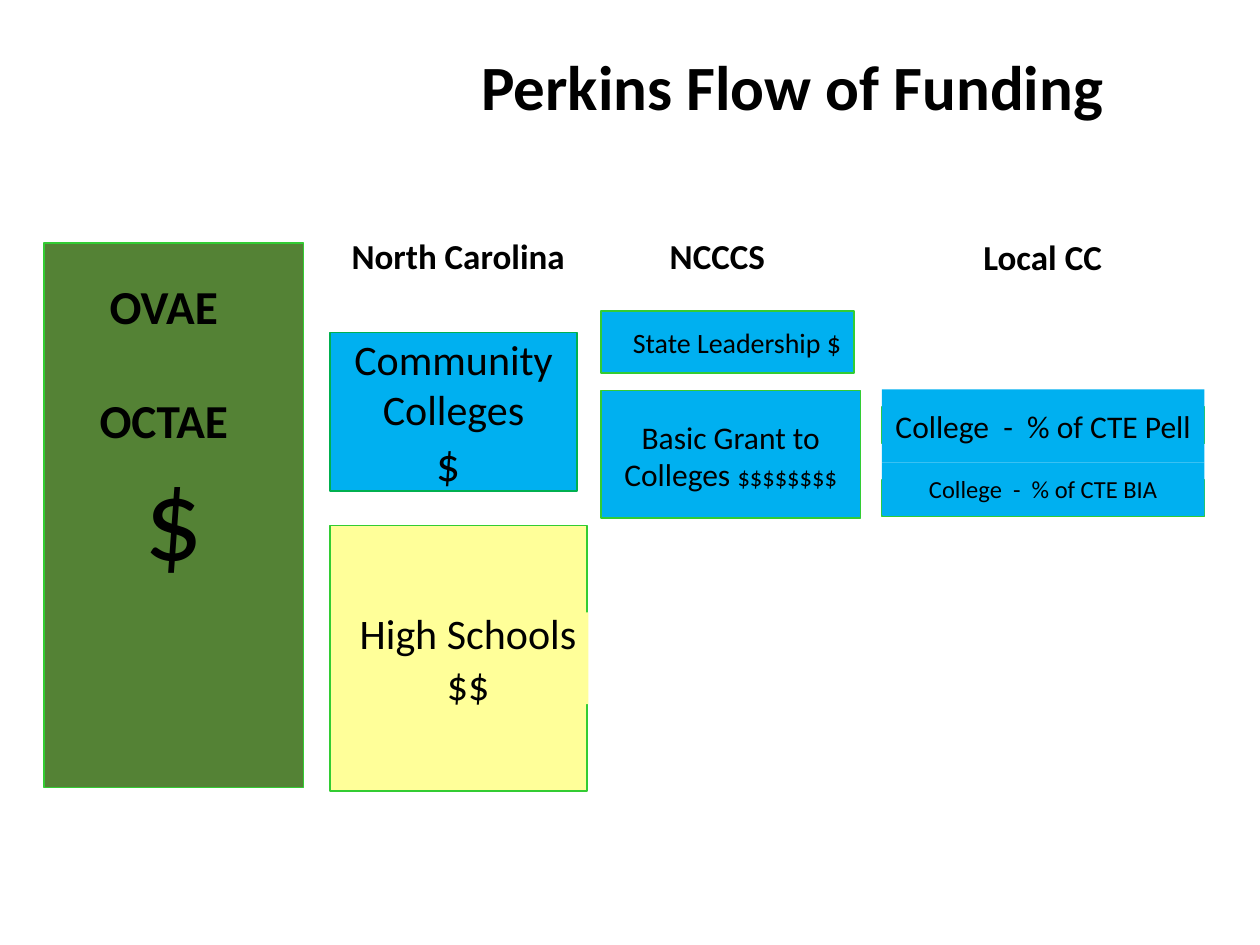
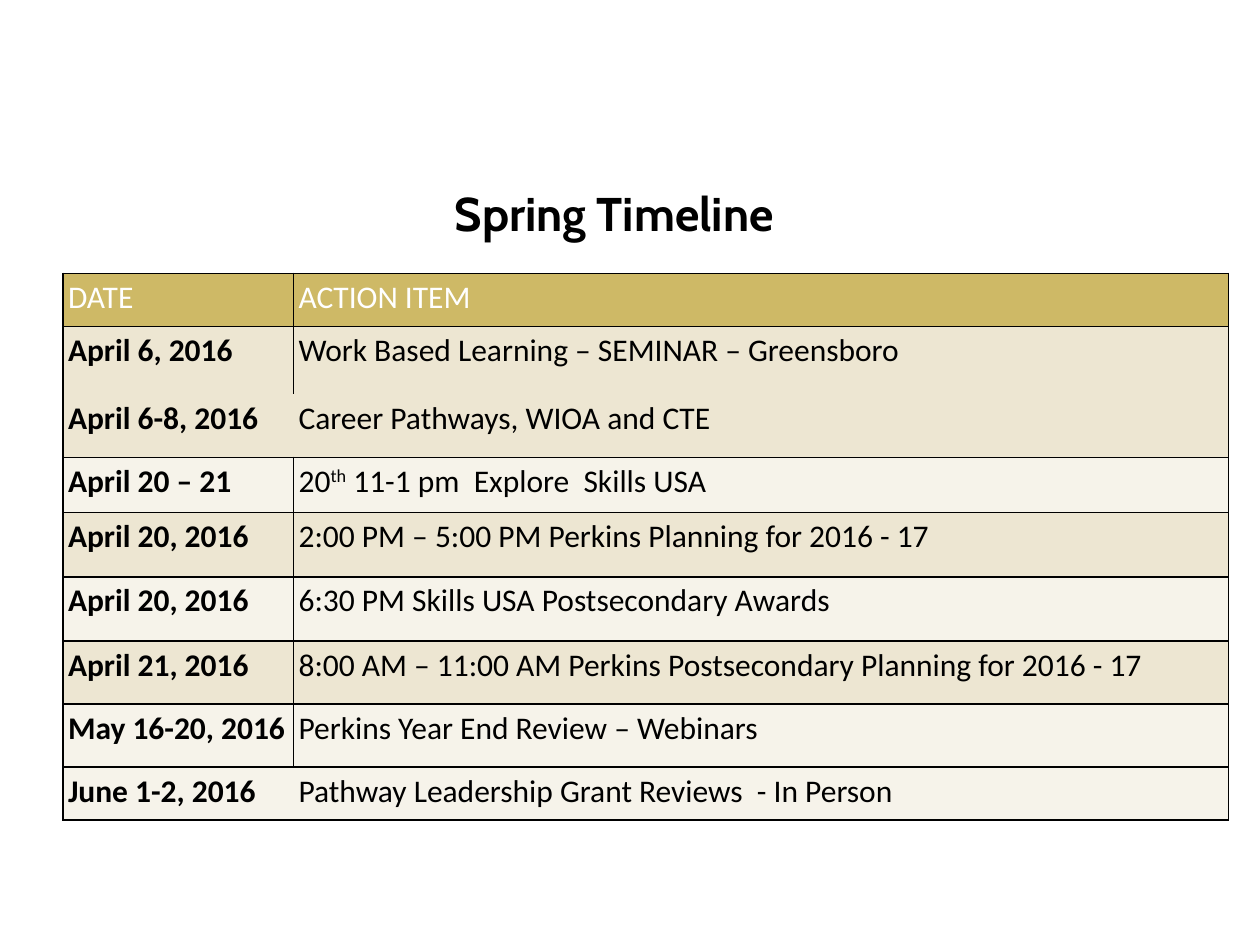
from lxml import etree
from pptx import Presentation
from pptx.dml.color import RGBColor
from pptx.enum.shapes import MSO_SHAPE
from pptx.enum.text import MSO_ANCHOR, PP_ALIGN
from pptx.oxml.ns import qn
from pptx.util import Inches, Pt

COLORS = {
    "black": "000000", "white": "FFFFFF",
    "federal": "548235", "schools": "FFFF99", "college": "00B0F0",
    "outline": "33CC33", "dark outline": "00B050",
    "header": "CEB966", "dark row": "EDE6D2", "light row": "F6F3EA",
}
BODY_FONT = "Calibri"
TITLE_ANCHOR = MSO_ANCHOR.MIDDLE


def write_spans(para, spans, bold=False, color="black", font=BODY_FONT):
    """Add (text, size) spans to a paragraph and return the new runs."""
    runs = []
    for text, size in spans:
        span = para.add_run()
        span.text = text
        span.font.name = font
        span.font.size = Pt(size)
        span.font.bold = bold
        span.font.color.rgb = RGBColor.from_string(COLORS[color])
        runs.append(span)
    return runs


def add_box(page, place, lines=(), fill=None, line=None, bold=False, font=BODY_FONT,
            inset=0, anchor=MSO_ANCHOR.MIDDLE, align=PP_ALIGN.CENTER, gap=0):
    """Add a rectangle, or a text box when there is no fill; gap parts the lines."""
    lengths = [Inches(value) for value in place]
    if fill:
        box = page.shapes.add_shape(MSO_SHAPE.RECTANGLE, *lengths)
        box.shadow.inherit = False
        box.fill.solid()
        box.fill.fore_color.rgb = RGBColor.from_string(COLORS[fill])
        if line:
            box.line.color.rgb = RGBColor.from_string(COLORS[line])
            box.line.width = Pt(1)
        else:
            box.line.fill.background()
    else:
        box = page.shapes.add_textbox(*lengths)
    frame = box.text_frame
    frame.word_wrap = True
    frame.vertical_anchor = anchor
    frame.margin_left = frame.margin_right = Inches(inset)
    frame.margin_top = frame.margin_bottom = Inches(inset)
    for index, spans in enumerate(lines):
        para = frame.add_paragraph() if index else frame.paragraphs[0]
        para.alignment = align
        if index and gap:
            para.space_before = Pt(gap)
        write_spans(para, spans, bold, font=font)


deck = Presentation()
deck.slide_width, deck.slide_height = Inches(10), Inches(7.5)
blank = deck.slide_layouts[6]

# Slide 1: flow of funding
page = deck.slides.add_slide(blank)
add_box(page, (3.5, 0.3, 5.58, 0.76), [[("Perkins Flow of Funding", 36)]], bold=True)

# Federal source
add_box(page, (0.35, 1.93, 2.06, 4.32), fill="federal", line="outline")
add_box(page, (0.35, 3.5, 2.06, 1.17), [[("$", 66)]])
add_box(page, (0.67, 2.2, 1.26, 1.36), [[("OVAE", 27)], [("OCTAE", 27)]], bold=True, gap=33)

# Column headings
for heading, left, top, align in [
    ("North Carolina", 2.75, 1.82, PP_ALIGN.LEFT),
    ("NCCCS ", 4.77, 1.82, PP_ALIGN.CENTER),
    ("Local CC", 7.32, 1.83, PP_ALIGN.CENTER),
]:
    add_box(page, (left, top, 1.91, 0.41), [[(heading, 20)]], bold=True,
            inset=0.04, anchor=MSO_ANCHOR.TOP, align=align)

# State split
add_box(page, (2.62, 4.17, 2.04, 2.11), fill="schools", line="outline")
add_box(page, (2.76, 4.86, 1.91, 0.73), [[("High Schools", 24)], [("$$", 24)]], fill="schools")
add_box(page, (2.62, 2.64, 1.96, 1.26), [[("Community Colleges", 24)], [("$ ", 27)]],
        fill="college", line="dark outline")

# College system split
add_box(page, (4.77, 3.1, 2.06, 1.01), fill="college", line="outline")
add_box(page, (4.77, 3.31, 2.06, 0.61), [[("Basic Grant to Colleges ", 18), ("$$$$$$$$", 14)]])
add_box(page, (4.77, 2.47, 2.01, 0.49), fill="college", line="outline")
add_box(page, (4.77, 2.6, 2.16, 0.24), [[("State Leadership $", 16)]])

# Local shares: an outlined strip behind each label
for share, size, strip_top, label_top, label_height in [
    ("Pell", 18, 3.23, 3.09, 0.58),
    ("BIA", 14, 3.81, 3.67, 0.42),
]:
    add_box(page, (7, strip_top, 2.56, 0.29), fill="college", line="outline")
    add_box(page, (7, label_top, 2.56, label_height),
            [[(f"College  -  % of CTE {share}", size)]], fill="college")

# Slide 2: timeline
page = deck.slides.add_slide(blank)
add_box(page, (0.83, 1.33, 8.09, 0.71), [[("Spring Timeline", 27)]], bold=True, font="Cabin")

# Row height, fill, date, action
timeline = [
    (0.42, "header", "DATE", ["ACTION ITEM"]),
    (0.54, "dark row", "April 6, 2016", ["Work Based Learning – SEMINAR – Greensboro"]),
    (0.5, "dark row", "April 6-8, 2016", ["Career Pathways, WIOA and CTE"]),
    (0.44, "light row", "April 20 – 21", ["20", "th", " 11-1 pm  Explore  Skills USA"]),
    (0.51, "dark row", "April 20, 2016", ["2:00 PM – 5:00 PM Perkins Planning for 2016 - 17"]),
    (0.51, "light row", "April 20, 2016", ["6:30 PM Skills USA Postsecondary Awards"]),
    (0.5, "dark row", "April 21, 2016",
     ["8:00 AM – 11:00 AM Perkins Postsecondary Planning for 2016 - 17"]),
    (0.5, "light row", "May 16-20, 2016", ["Perkins Year End Review – Webinars"]),
    (0.42, "light row", "June 1-2, 2016", ["Pathway Leadership Grant Reviews  - In Person"]),
]
UNDIVIDED_ROWS = (2, 8)  # no line between date and action
JOINED_ROWS = (1, 2)     # no line between these two rows

table = page.shapes.add_table(len(timeline), 2, Inches(0.5), Inches(2.17),
                              Inches(9.25), Inches(4.34)).table
table.columns[0].width, table.columns[1].width = Inches(1.83), Inches(7.42)
for row, (height, fill, date, action) in enumerate(timeline):
    table.rows[row].height = Inches(height)
    for column, texts in enumerate([[date], action]):
        cell = table.cell(row, column)
        cell.margin_left = cell.margin_right = Inches(0.04)
        cell.margin_top = cell.margin_bottom = Inches(0.04)
        runs = write_spans(cell.text_frame.paragraphs[0], [(text, 18) for text in texts],
                           bold=row > 0 and column == 0,
                           color="black" if row else "white")
        for span in runs:
            if span.text == "th":
                span.font._element.set("baseline", "30000")

        divided = row not in UNDIVIDED_ROWS
        borders = {
            "a:lnL": column == 0 or divided,
            "a:lnR": column == 1 or divided,
            "a:lnT": row != JOINED_ROWS[1],
            "a:lnB": row != JOINED_ROWS[0],
        }
        properties = cell._tc.get_or_add_tcPr()
        for tag, drawn in borders.items():
            border = etree.SubElement(properties, qn(tag), w=str(Pt(1)))
            if drawn:
                solid = etree.SubElement(border, qn("a:solidFill"))
                etree.SubElement(solid, qn("a:srgbClr"), val=COLORS["black"])
            else:
                etree.SubElement(border, qn("a:noFill"))
        cell.fill.solid()
        cell.fill.fore_color.rgb = RGBColor.from_string(COLORS[fill])

deck.save("out.pptx")
